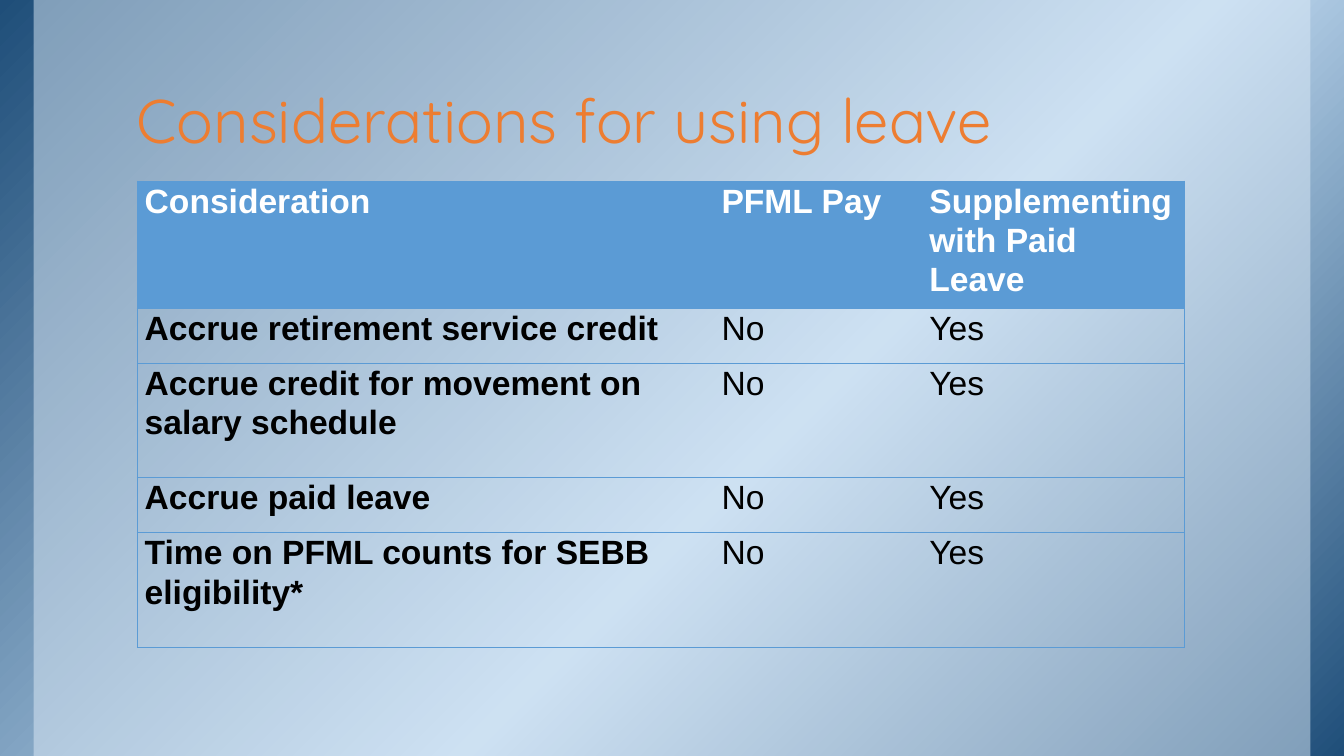
from copy import deepcopy

from lxml.etree import SubElement
from pptx import Presentation
from pptx.dml.color import RGBColor
from pptx.enum.shapes import MSO_SHAPE
from pptx.enum.text import MSO_ANCHOR
from pptx.oxml.ns import qn
from pptx.util import Pt

NAVY = RGBColor(0x1F, 0x4E, 0x79)
SKY = RGBColor(0xBD, 0xD7, 0xEE)
PALE = RGBColor(0xDE, 0xEB, 0xF7)
BLUE = RGBColor(0x5B, 0x9B, 0xD5)
ORANGE = RGBColor(0xED, 0x7D, 0x31)
WHITE = RGBColor(0xFF, 0xFF, 0xFF)
BLACK = RGBColor(0x00, 0x00, 0x00)


def write(frame, text, line_spacing, color, **font_format):
    paragraph = frame.paragraphs[0]
    paragraph.line_spacing = line_spacing
    run = paragraph.add_run()
    run.text = text
    run.font.color.rgb = color
    for attribute, value in font_format.items():
        setattr(run.font, attribute, value)


def add_border(cell, side, visible):
    line = SubElement(cell._tc.get_or_add_tcPr(), qn(f"a:ln{side}"), w=str(Pt(0.5)))
    if visible:
        solid = SubElement(line, qn("a:solidFill"))
        SubElement(solid, qn("a:srgbClr"), val=str(BLUE))
    else:
        SubElement(line, qn("a:noFill"))


deck = Presentation()
deck.slide_width, deck.slide_height = Pt(960), Pt(540)
slide = deck.slides.add_slide(deck.slide_layouts[6])

# Background: diagonal gradient under a translucent panel
backdrop = slide.shapes.add_shape(MSO_SHAPE.RECTANGLE, 0, 0, Pt(960), Pt(540))
panel = slide.shapes.add_shape(MSO_SHAPE.RECTANGLE, Pt(24), 0, Pt(912), Pt(540))
for layer in (backdrop, panel):
    layer.shadow.inherit = False
    layer.line.fill.background()

backdrop.fill.gradient()
backdrop.fill.gradient_angle = 315
stop_list = backdrop._element.spPr.find(qn("a:gradFill")).find(qn("a:gsLst"))
stop_list.append(deepcopy(stop_list[0]))
gradient = [(0, NAVY), (0.58, SKY), (1, NAVY)]
for stop, (position, color) in zip(backdrop.fill.gradient_stops, gradient):
    stop.position = position
    stop.color.rgb = color

panel.fill.solid()
panel.fill.fore_color.rgb = PALE
panel_color = panel._element.spPr.find(qn("a:solidFill"))[0]
SubElement(panel_color, qn("a:alpha"), val="50000")

# Title
title = slide.shapes.add_textbox(Pt(88), Pt(6), Pt(800), Pt(110)).text_frame
title_format = {
    "word_wrap": True,
    "vertical_anchor": MSO_ANCHOR.BOTTOM,
    "margin_left": Pt(9.6),
    "margin_right": Pt(9.6),
    "margin_top": Pt(4.8),
    "margin_bottom": Pt(4.8),
}
for attribute, value in title_format.items():
    setattr(title, attribute, value)
write(title, "Considerations for using leave", 0.85, ORANGE,
      size=Pt(44), name="Quicksand")

# Leave comparison table
considerations = [
    ("Consideration", "PFML Pay", "Supplementing with Paid Leave"),
    ("Accrue retirement service credit", "No", "Yes"),
    ("Accrue credit for movement on salary schedule", "No", "Yes"),
    ("Accrue paid leave", "No", "Yes"),
    ("Time on PFML counts for SEBB eligibility*", "No", "Yes"),
]
widths = [412, 148.5, 187.5]
heights = [84, 39.3, 82, 39.3, 82]
comparison = slide.shapes.add_table(
    len(heights), len(widths), Pt(98), Pt(129.3), Pt(sum(widths)), Pt(sum(heights))
).table
comparison.horz_banding = False
for column, width in zip(comparison.columns, widths):
    column.width = Pt(width)

cell_format = {
    "margin_left": Pt(5.4),
    "margin_right": Pt(5.4),
    "margin_top": 0,
    "margin_bottom": 0,
}
for r, (texts, height) in enumerate(zip(considerations, heights)):
    comparison.rows[r].height = Pt(height)
    for c, text in enumerate(texts):
        cell = comparison.cell(r, c)
        for attribute, value in cell_format.items():
            setattr(cell, attribute, value)

        # Horizontal rules everywhere, vertical ones only at the outer edges
        add_border(cell, "L", c == 0)
        add_border(cell, "R", c == len(widths) - 1)
        add_border(cell, "T", True)
        add_border(cell, "B", True)

        if r == 0:
            cell.fill.solid()
            cell.fill.fore_color.rgb = BLUE
        else:
            cell.fill.background()
        write(cell.text_frame, text, 1.05, WHITE if r == 0 else BLACK,
              size=Pt(24), name="Arial", bold=r == 0 or c == 0)

deck.save("out.pptx")
